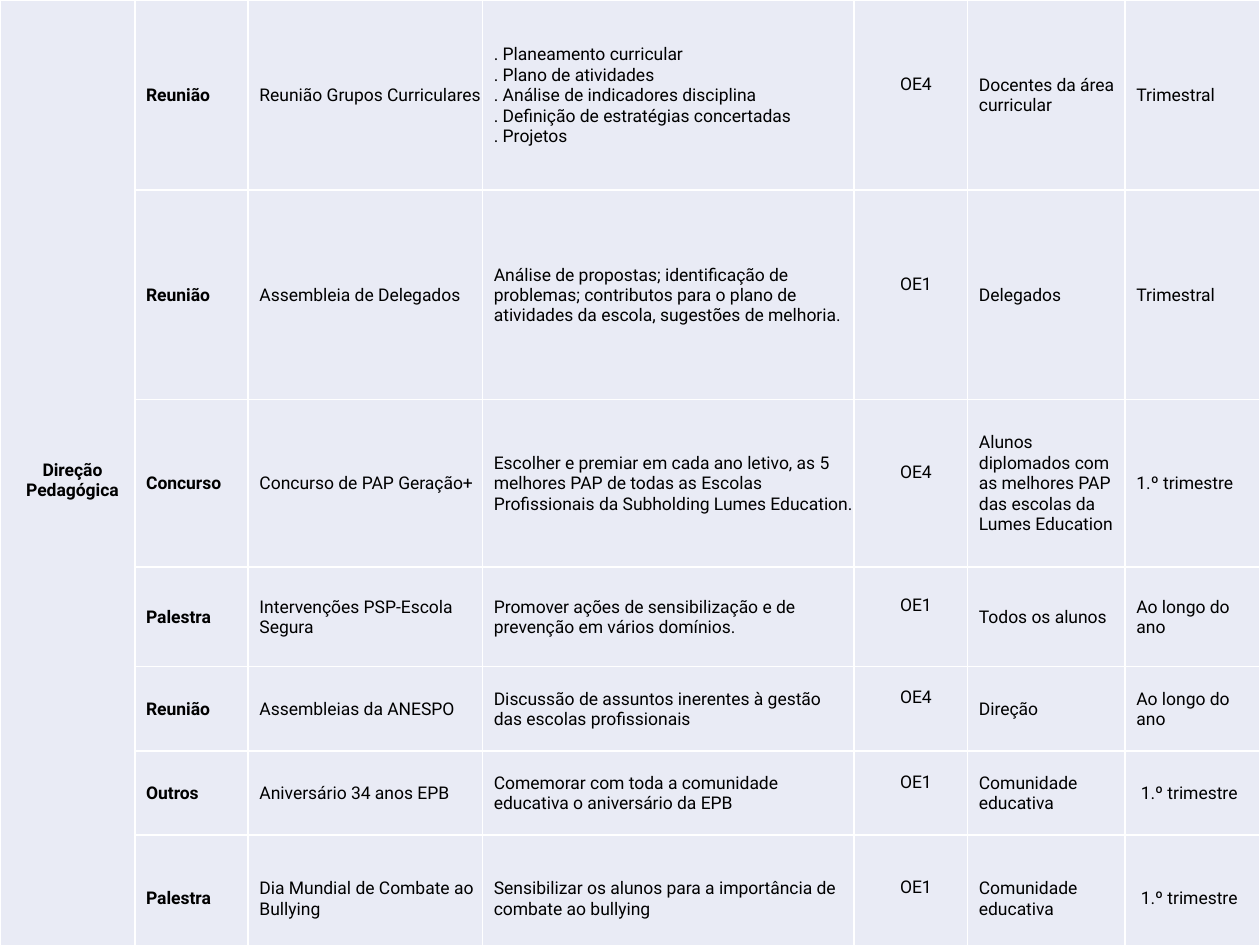
from copy import deepcopy

from lxml.etree import SubElement
from pptx import Presentation
from pptx.dml.color import RGBColor
from pptx.enum.text import MSO_ANCHOR, PP_ALIGN
from pptx.oxml.ns import qn
from pptx.util import Inches, Pt

COLORS = {"cell": "E9EBF5", "border": "FFFFFF", "text": "000000"}
FONT = "Roboto"
COLS = [1.07, 0.9, 1.86, 2.95, 0.9, 1.25, 1.07]
ROWS = [1.51, 1.66, 1.33, 0.79, 0.67, 0.67, 1]
AREA = "Direção Pedagógica"
ACTIVITIES = [
    ("Reunião", "Reunião Grupos Curriculares",
     ". Planeamento curricular\n. Plano de atividades\n"
     ". Análise de indicadores disciplina\n"
     ". Definição de estratégias concertadas\n. Projetos",
     "OE4", "Docentes da área curricular", "Trimestral"),
    ("Reunião", "Assembleia de Delegados",
     "Análise de propostas; identificação de problemas; contributos para "
     "o plano de atividades da escola, sugestões de melhoria.",
     "OE1", "Delegados", "Trimestral"),
    ("Concurso", "Concurso de PAP Geração+",
     "Escolher e premiar em cada ano letivo, as 5 melhores PAP de todas as "
     "Escolas Profissionais da Subholding Lumes Education.",
     "OE4", "Alunos diplomados com as melhores PAP das escolas da Lumes Education",
     "1.º trimestre"),
    ("Palestra", "Intervenções PSP-Escola Segura",
     "Promover ações de sensibilização e de prevenção em vários domínios.",
     "OE1", "Todos os alunos", "Ao longo do ano"),
    ("Reunião", "Assembleias da ANESPO",
     "Discussão de assuntos inerentes à gestão das escolas profissionais",
     "OE4", "Direção", "Ao longo do ano"),
    ("Outros", "Aniversário 34 anos EPB",
     "Comemorar com toda a comunidade educativa o aniversário da EPB",
     "OE1", "Comunidade educativa", " 1.º trimestre"),
    ("Palestra", "Dia Mundial de Combate ao Bullying",
     "Sensibilizar os alunos para a importância de combate ao bullying",
     "OE1", "Comunidade educativa", " 1.º trimestre"),
]


def rgb(name):
    return RGBColor.from_string(COLORS[name])


def write(tf, text, size=10, bold=False, align=PP_ALIGN.LEFT, indent=0.08):
    p = tf.paragraphs[0]
    p.text = text
    p.alignment = align
    p._p.get_or_add_pPr().set("marL", str(Inches(indent)))
    for r in p.runs:
        r.font.name = FONT
        r.font.size = Pt(size)
        r.font.bold = bold
        r.font.color.rgb = rgb("text")
    for br in p._p.findall(qn("a:br")):
        br.append(deepcopy(p.runs[0]._r.rPr))


def style_cell(cell, inset=0.01, bottom=0):
    cell.vertical_anchor = MSO_ANCHOR.MIDDLE
    cell.margin_left = cell.margin_right = cell.margin_top = Inches(inset)
    cell.margin_bottom = Inches(bottom)
    tcPr = cell._tc.get_or_add_tcPr()
    for side in ("lnL", "lnR", "lnT", "lnB"):
        ln = SubElement(tcPr, qn(f"a:{side}"), w=str(Pt(1)))
        fill = SubElement(ln, qn("a:solidFill"))
        SubElement(fill, qn("a:srgbClr"), val=COLORS["border"])
    cell.fill.solid()
    cell.fill.fore_color.rgb = rgb("cell")


def activity_table(slide, left, top, width, height):
    frame = slide.shapes.add_table(len(ROWS), len(COLS), left, top, width, height)
    table = frame.table
    table.first_row = table.horz_banding = False
    for col, share in zip(table.columns, COLS):
        col.width = int(width * share / sum(COLS))
    for row, share in zip(table.rows, ROWS):
        row.height = int(height * share / sum(ROWS))

    for i, activity in enumerate(ACTIVITIES):
        style_cell(table.cell(i, 0), inset=0)
        for j, text in enumerate(activity, 1):
            cell = table.cell(i, j)
            is_goal = j == 4
            style_cell(cell, inset=0 if is_goal else 0.01,
                       bottom=0.17 if is_goal else 0)
            write(cell.text_frame, text, bold=j == 1,
                  align=PP_ALIGN.CENTER if is_goal else PP_ALIGN.LEFT)

    area = table.cell(0, 0)
    area.merge(table.cell(len(ROWS) - 1, 0))
    write(area.text_frame, AREA, bold=True, align=PP_ALIGN.CENTER)


def main():
    prs = Presentation()
    prs.slide_width, prs.slide_height = Inches(10), Inches(7.5)
    slide = prs.slides.add_slide(prs.slide_layouts[6])
    activity_table(slide, 0, 0, prs.slide_width, Inches(sum(ROWS)))
    prs.save("out.pptx")


if __name__ == "__main__":
    main()
